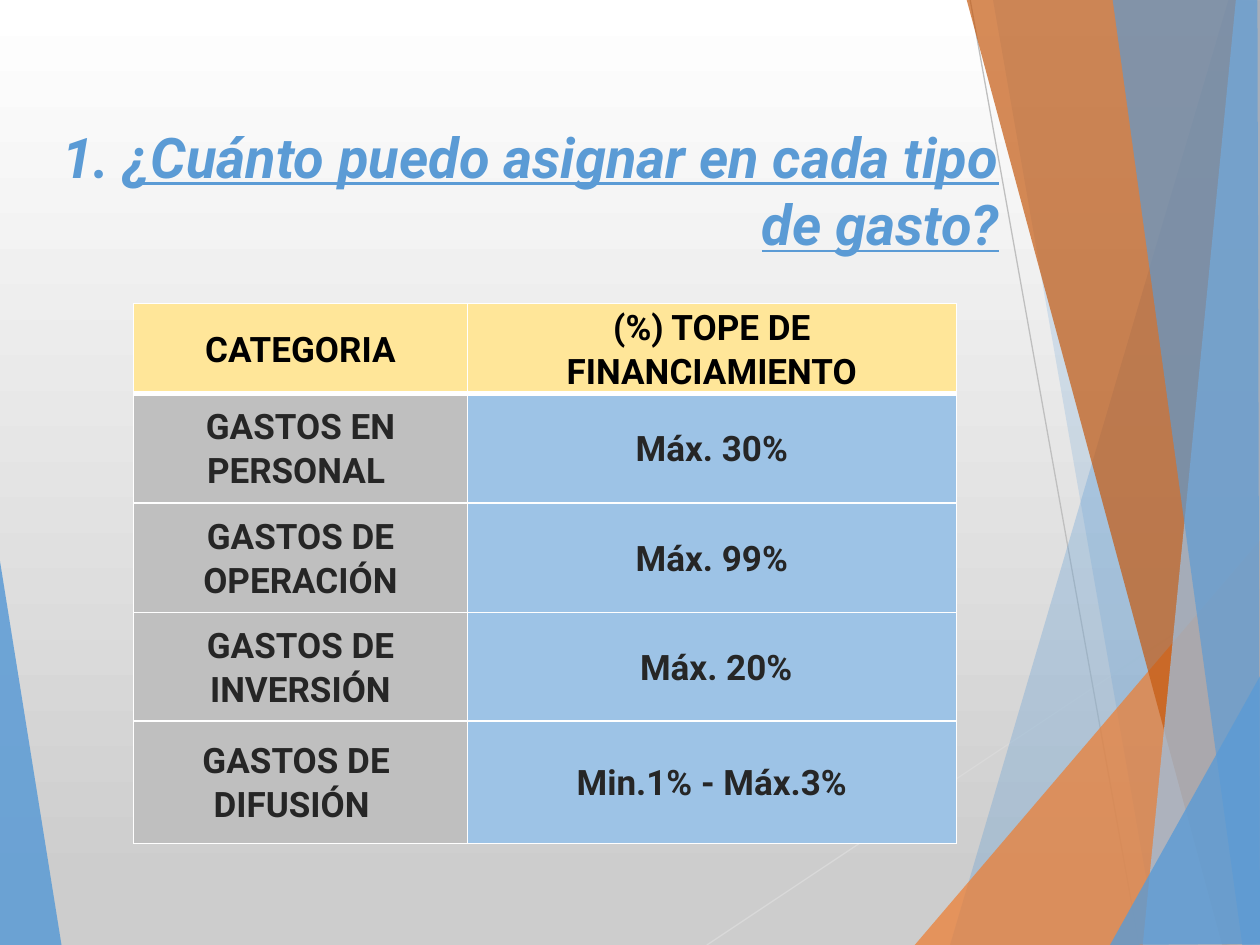
from lxml import etree
from pptx import Presentation
from pptx.dml.color import RGBColor
from pptx.enum.shapes import MSO_CONNECTOR
from pptx.enum.text import MSO_ANCHOR, PP_ALIGN
from pptx.oxml.ns import qn
from pptx.util import Inches, Pt

STRAIGHT = MSO_CONNECTOR.STRAIGHT
TOP, MIDDLE = MSO_ANCHOR.TOP, MSO_ANCHOR.MIDDLE
CENTER, RIGHT = PP_ALIGN.CENTER, PP_ALIGN.RIGHT

WHITE = RGBColor(0xFF, 0xFF, 0xFF)
BLACK = RGBColor(0, 0, 0)
CHARCOAL = RGBColor(0x26, 0x26, 0x26)
SILVER = RGBColor(0xCD, 0xCD, 0xCD)
PALE_GRAY = RGBColor(0xD9, 0xD9, 0xD9)
GRAY = RGBColor(0xBF, 0xBF, 0xBF)
BLUE = RGBColor(0x5B, 0x9B, 0xD5)
LIGHT_BLUE = RGBColor(0x9D, 0xC3, 0xE6)
ORANGE = RGBColor(0xED, 0x7D, 0x31)
RUST = RGBColor(0xC5, 0x5A, 0x11)
CREAM = RGBColor(0xFF, 0xE6, 0x99)

FONT = "Roboto"
LEFT_WEDGE = ([(-0.01, 4.39), (0.49, 7.51), (-0.01, 7.5)], BLUE, 85)
RAYS = [((5.61, 7.5), (10.01, 4.57), PALE_GRAY), ((7.7, 0), (9.04, 7.5), GRAY)]
RIGHT_FACETS = [
    ([(9.75, 0), (7.54, 7.5), (10.02, 7.51), (10.01, 0.01)], BLUE, 30),
    ([(7.88, -0.01), (9.19, 7.5), (10.01, 7.5), (10.01, -0.01)], BLUE, 20),
    ([(7.26, 7.5), (10, 4.29), (10.01, 7.5)], ORANGE, 72),
    ([(7.67, -0.01), (9.7, 7.5), (10.01, 7.49), (10.01, -0.01)], RUST, 70),
    ([(9.81, -0.01), (9.07, 7.5), (10.01, 7.5), (10, -0.01)], LIGHT_BLUE, 70),
    ([(8.83, -0.01), (9.86, 7.5), (10, 7.5), (9.98, -0.01)], BLUE, 65),
    ([(8.81, 7.5), (10.01, 5.35), (10.01, 7.49)], BLUE, 80),
]
COLUMN_WIDTHS = [2.65, 3.88]
ROW_HEIGHTS = [0.71, 0.87, 0.87, 0.86, 0.97]
LIMITS = [
    ("CATEGORIA", "(%) TOPE DE FINANCIAMIENTO"),
    ("GASTOS EN PERSONAL ", "Máx. 30%"),
    ("GASTOS DE OPERACIÓN", "Máx. 99%"),
    ("GASTOS DE INVERSIÓN", " Máx. 20%"),
    ("GASTOS DE \nDIFUSIÓN  ", "Min.1% - Máx.3%"),
]


def add_span(para, text, size, color):
    """Add a bold run to a paragraph and return it."""
    span = para.add_run()
    span.text = text
    span.font.name = FONT
    span.font.size = Pt(size)
    span.font.bold = True
    span.font.color.rgb = color
    return span


def paint_background(page):
    """Fill the page with a vertical white to silver gradient."""
    fill = page.background.fill
    fill.gradient()
    fill.gradient_angle = 270
    for stop, color, position in zip(fill.gradient_stops, (WHITE, SILVER), (0, 0.94)):
        stop.color.rgb = color
        stop.position = position


def add_facet(page, points, color, opacity):
    """Draw one translucent polygon through points given in inches."""
    corners = [(Inches(x), Inches(y)) for x, y in points]
    builder = page.shapes.build_freeform(*corners[0])
    builder.add_line_segments(corners[1:], close=True)
    facet = builder.convert_to_shape()
    facet.shadow.inherit = False
    facet.line.fill.background()
    facet.fill.solid()
    facet.fill.fore_color.rgb = color
    tint = facet.fill._xPr.find(".//" + qn("a:srgbClr"))
    etree.SubElement(tint, qn("a:alpha"), val=str(opacity * 1000))


def add_ray(page, start, end, color):
    """Draw one thin straight line between two points given in inches."""
    ray = page.shapes.add_connector(STRAIGHT, *map(Inches, start + end))
    ray.line.color.rgb = color
    ray.line.width = Pt(0.75)
    etree.SubElement(ray._element.spPr, qn("a:effectLst"))


def add_decoration(page):
    """Draw the facets and rays along both sides of the page."""
    add_facet(page, *LEFT_WEDGE)
    for ray in RAYS:
        add_ray(page, *ray)
    for facet in RIGHT_FACETS:
        add_facet(page, *facet)


def add_title(page, left, top, width, height):
    """Place the numbered, right-aligned question."""
    box = page.shapes.add_textbox(left, top, width, height)
    frame = box.text_frame
    frame.word_wrap = True
    frame.vertical_anchor = TOP
    para = frame.paragraphs[0]
    para.alignment = RIGHT
    para.space_after = Pt(2)
    number = add_span(para, "1. ", 32, BLUE)
    question = add_span(para, "¿Cuánto puedo asignar en cada tipo de gasto?", 32, BLUE)
    number.font.italic = question.font.italic = True
    question.font.underline = True


def add_borders(cell, bottom_width):
    """Give a cell white borders with its own bottom width."""
    properties = cell._tc.get_or_add_tcPr()
    for side, width in (("L", 1), ("R", 1), ("T", 1), ("B", bottom_width)):
        border = etree.SubElement(properties, qn("a:ln" + side), w=str(Pt(width)))
        paint = etree.SubElement(border, qn("a:solidFill"))
        etree.SubElement(paint, qn("a:srgbClr"), val=str(WHITE))


def fill_cell(cell, text, color, background, bottom_width):
    """Write centred text in a cell and style the cell."""
    add_borders(cell, bottom_width)
    cell.fill.solid()
    cell.fill.fore_color.rgb = background
    cell.vertical_anchor = MIDDLE
    cell.margin_left = cell.margin_right = Inches(0.02)
    cell.margin_top = cell.margin_bottom = 0
    frame = cell.text_frame
    for index, line in enumerate(text.split("\n")):
        para = frame.add_paragraph() if index else frame.paragraphs[0]
        para.alignment = CENTER
        para.line_spacing = 1.07
        add_span(para, line, 20, color)


def add_limits_table(page, left, top, width, height):
    """Place the table of funding limits by category."""
    shape = page.shapes.add_table(len(LIMITS), len(COLUMN_WIDTHS), left, top, width, height)
    table = shape.table
    table.first_row = table.horz_banding = False
    for column, size in zip(table.columns, COLUMN_WIDTHS):
        column.width = Inches(size)
    for row, size in zip(table.rows, ROW_HEIGHTS):
        row.height = Inches(size)
    for row_index, texts in enumerate(LIMITS):
        header = row_index == 0
        backgrounds = (CREAM, CREAM) if header else (GRAY, LIGHT_BLUE)
        color = BLACK if header else CHARCOAL
        for column_index, (text, background) in enumerate(zip(texts, backgrounds)):
            cell = table.cell(row_index, column_index)
            fill_cell(cell, text, color, background, 3 if header else 1)


def main():
    """Build the slide and save the deck."""
    deck = Presentation()
    deck.slide_width, deck.slide_height = Inches(10), Inches(7.5)
    page = deck.slides.add_slide(deck.slide_layouts[6])
    paint_background(page)
    add_decoration(page)
    add_title(page, Inches(0), Inches(0.92), Inches(8.03), Inches(1.34))
    add_limits_table(page, Inches(1.06), Inches(2.41), Inches(6.53), Inches(4.28))
    deck.save("out.pptx")


if __name__ == "__main__":
    main()
